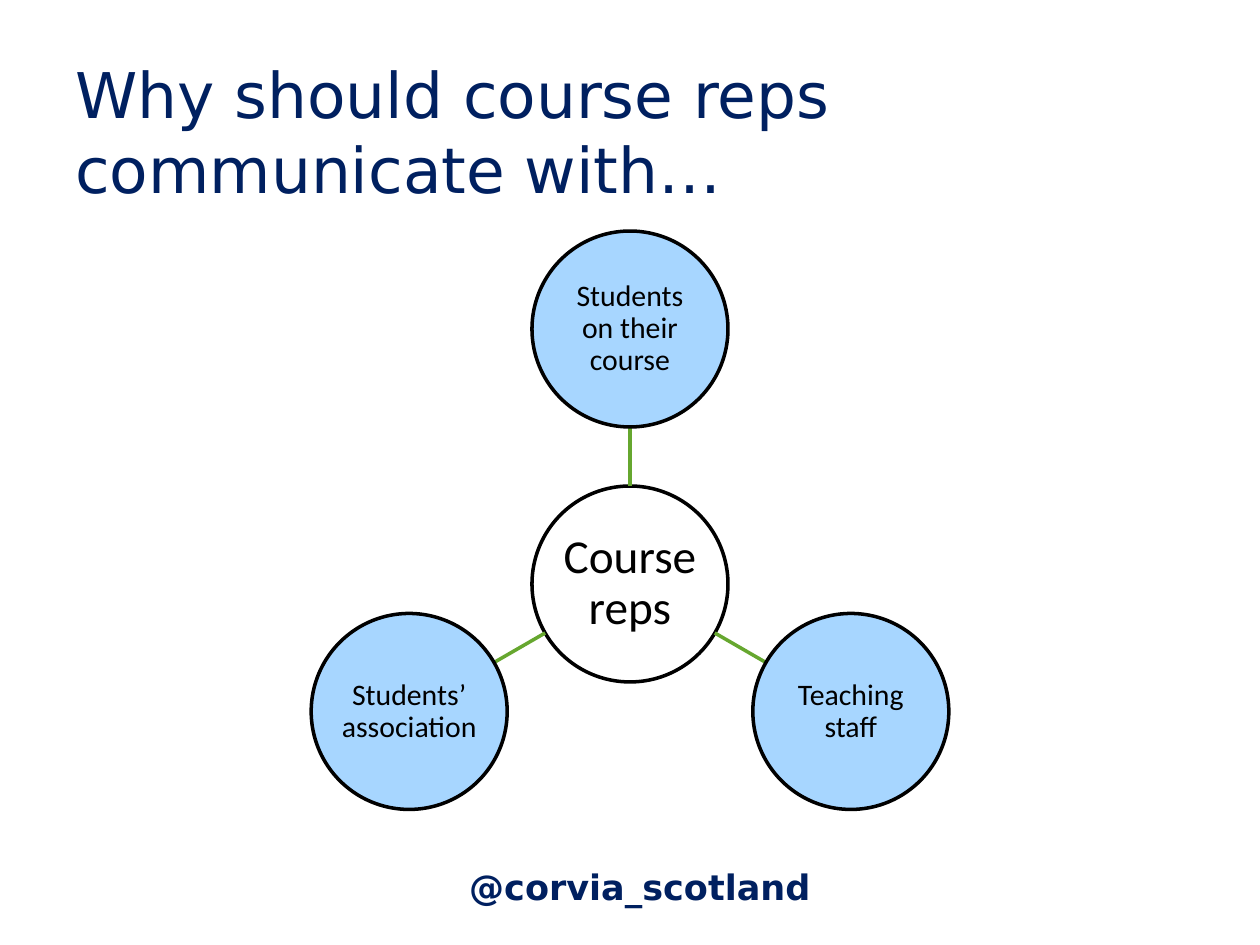
from dataclasses import dataclass
from math import cos, radians, sin

from lxml.etree import SubElement
from pptx import Presentation
from pptx.dml.color import RGBColor
from pptx.enum.shapes import MSO_CONNECTOR, MSO_SHAPE
from pptx.enum.text import MSO_ANCHOR, PP_ALIGN
from pptx.oxml.ns import qn
from pptx.util import Emu, Pt

EMU_PER_PX = 914400 / 126


def px(length):
    return Emu(round(length * EMU_PER_PX))


@dataclass(frozen=True)
class Theme:
    navy: RGBColor = RGBColor(0x00, 0x20, 0x60)
    black: RGBColor = RGBColor(0x00, 0x00, 0x00)
    sky: RGBColor = RGBColor(0xA7, 0xD6, 0xFF)
    green: RGBColor = RGBColor(0x66, 0xA7, 0x2F)
    heading_font: str = "DejaVu Sans"
    diagram_font: str = "Calibri"
    title_size: int = 36
    hub_size: int = 27
    node_size: int = 17
    handle_size: int = 20
    line_width: int = 2


class SlideBuilder:
    def __init__(self, slide, theme):
        self.shapes = slide.shapes
        self.theme = theme

    def set_text(self, shape, text, font, size, color, align, bold=False):
        frame = shape.text_frame
        frame.text = text
        frame.word_wrap = True
        frame.vertical_anchor = MSO_ANCHOR.MIDDLE
        para = frame.paragraphs[0]
        para.alignment = align
        span = para.runs[0]
        span.font.name = font
        span.font.size = Pt(size)
        span.font.bold = bold
        span.font.color.rgb = color
        return frame

    def heading(self, text, left, top, width, height, size, align, bold=False):
        box = self.shapes.add_textbox(px(left), px(top), px(width), px(height))
        self.set_text(box, text, self.theme.heading_font, size,
                      self.theme.navy, align, bold)

    def circle(self, text, center, radius, size, fill=None):
        x, y = center
        circle = self.shapes.add_shape(
            MSO_SHAPE.OVAL, px(x - radius), px(y - radius),
            px(2 * radius), px(2 * radius))
        circle.shadow.inherit = False
        if fill is None:
            circle.fill.background()
        else:
            circle.fill.solid()
            circle.fill.fore_color.rgb = fill
        circle.line.color.rgb = self.theme.black
        circle.line.width = Pt(self.theme.line_width)
        frame = self.set_text(circle, text, self.theme.diagram_font, size,
                              self.theme.black, PP_ALIGN.CENTER)
        frame.margin_left = frame.margin_right = px(1)
        frame.margin_top = frame.margin_bottom = px(1)
        frame.paragraphs[0].line_spacing = 0.9

    def spoke(self, start, end):
        spoke = self.shapes.add_connector(
            MSO_CONNECTOR.STRAIGHT, *map(px, (*start, *end)))
        spoke.line.color.rgb = self.theme.green
        spoke.line.width = Pt(self.theme.line_width)
        SubElement(spoke._element.spPr, qn("a:effectLst"))


def polar(center, distance, degrees):
    angle = radians(degrees)
    return center[0] + distance * cos(angle), center[1] + distance * sin(angle)


def main():
    deck = Presentation()
    deck.slide_width, deck.slide_height = px(1260), px(945)
    theme = Theme()
    page = SlideBuilder(deck.slides.add_slide(deck.slide_layouts[6]), theme)

    page.heading("@corvia_scotland", 402, 859, 476, 55,
                 theme.handle_size, PP_ALIGN.CENTER, bold=True)
    page.heading("Why should course reps communicate with…", 63, 38, 915, 186,
                 theme.title_size, PP_ALIGN.LEFT)

    hub, radius, orbit = (630, 584), 98, 255
    page.circle("Course reps", hub, radius, theme.hub_size)
    contacts = ["Students on their course", "Teaching staff", "Students’ association"]
    for index, contact in enumerate(contacts):
        degrees = -90 + index * 360 / len(contacts)
        page.spoke(polar(hub, radius, degrees), polar(hub, orbit - radius, degrees))
        page.circle(contact, polar(hub, orbit, degrees), radius,
                    theme.node_size, theme.sky)

    deck.save("out.pptx")


if __name__ == "__main__":
    main()
